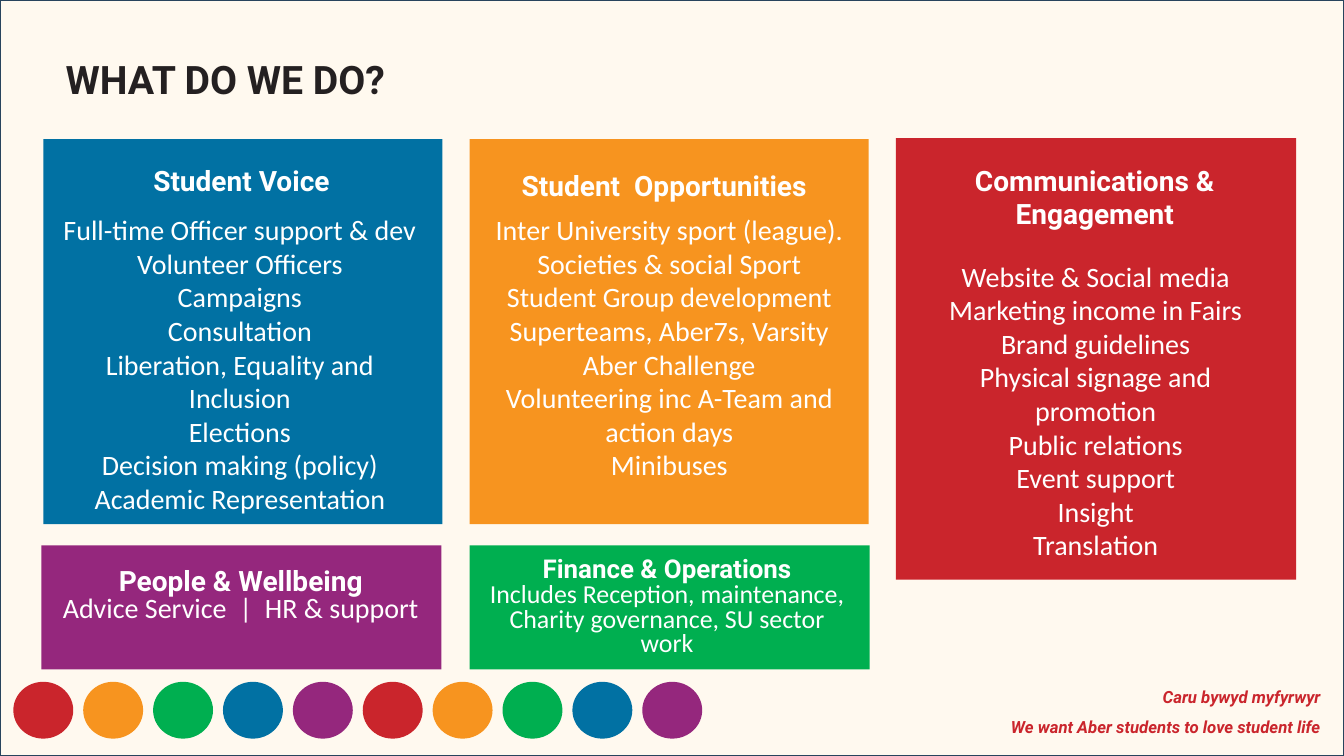
from pptx import Presentation
from pptx.dml.color import RGBColor
from pptx.enum import shapes, text
from pptx.util import Pt

RED = RGBColor(0xCA, 0x25, 0x2C)
ORANGE = RGBColor(0xF7, 0x94, 0x1F)
GREEN = RGBColor(0x00, 0xAF, 0x50)
BLUE = RGBColor(0x01, 0x71, 0xA3)
PURPLE = RGBColor(0x95, 0x27, 0x7D)
CREAM = RGBColor(0xFF, 0xF9, 0xEF)
NAVY = RGBColor(0x28, 0x44, 0x5D)
INK = RGBColor(0x24, 0x20, 0x21)
WHITE = RGBColor(0xFF, 0xFF, 0xFF)

W, H = 960, 540
TITLE = "WHAT DO WE DO?"
SLOGAN = ["Caru bywyd myfyrwyr", "We want Aber students to love student life"]
DEPARTMENTS = [
    dict(fill=BLUE, card=(31, 99.4, 285, 275),
         heading=["Student Voice"], heading_box=(29.5, 113, 286, 40),
         items=["Full-time Officer support & dev", "Volunteer Officers", "Campaigns",
                "Consultation", "Liberation, Equality and Inclusion", "Elections",
                "Decision making (policy)", "Academic Representation"],
         items_box=(36, 148.3, 270.7, 219.6)),
    dict(fill=ORANGE, card=(335.5, 99.4, 285, 275),
         heading=["Student  Opportunities"], heading_box=(331.5, 117, 286, 40),
         items=["Inter University sport (league).",
                "Societies & social Sport\vStudent Group development",
                "Superteams, Aber7s, Varsity", "Aber Challenge",
                "Volunteering inc A-Team and action days", "Minibuses"],
         items_box=(345.6, 148.3, 265, 180)),
    dict(fill=RED, card=(640, 98.6, 285.8, 315.4),
         heading=["Communications &", "Engagement"], heading_box=(639, 113, 286, 60),
         items=["Website & Social media", "Marketing income in Fairs", "Brand guidelines",
                "Physical signage and promotion", "Public relations", "Event support",
                "Insight", "Translation"],
         items_box=(668.9, 181.4, 227.5, 177.1)),
]
SERVICES = [
    dict(fill=GREEN, card=(335.5, 389.5, 285.8, 88.6), box=(333.4, 395.3, 286, 82),
         heading="Finance & Operations", size=18.5, body_size=18.5,
         body=["Includes Reception, maintenance,", "Charity governance, SU sector", "work"]),
    dict(fill=PURPLE, card=(29.5, 389.5, 285.8, 88.6), box=(29, 403.9, 286, 55),
         heading="People & Wellbeing", size=20, body_size=20,
         body=["Advice Service  |  HR & support"]),
]
DOT_COLORS = [RED, ORANGE, GREEN, BLUE, PURPLE] * 2
DOT_LEFT, DOT_TOP, DOT_W, DOT_H, DOT_STEP = 10, 487.5, 41.8, 39.6, 49.92

prs = Presentation()
prs.slide_width, prs.slide_height = Pt(W), Pt(H)
s = prs.slides.add_slide(prs.slide_layouts[4])
title = s.shapes.title
lists = [s.placeholders[i] for i in (1, 2, 3)]
spare = s.placeholders[4].element
spare.getparent().remove(spare)


def add_box(kind, box, fill, line=None, weight=1):
    sp = s.shapes.add_shape(kind, *map(Pt, box))
    sp.shadow.inherit = False
    sp.fill.solid()
    sp.fill.fore_color.rgb = fill
    if line is None:
        sp.line.fill.background()
    else:
        sp.line.color.rgb = line
        sp.line.width = Pt(weight)


def add_text(lines, box, sp=None, font="Calibri", size=20, color=WHITE, bold=False,
             italic=False, align=text.PP_ALIGN.CENTER, spacing=1.0, first=None):
    if sp is None:
        sp = s.shapes.add_textbox(*map(Pt, box))
    else:
        sp.left, sp.top, sp.width, sp.height = map(Pt, box)
        s.shapes.element.append(sp.element)
    tf = sp.text_frame
    tf.word_wrap = True
    tf.auto_size = text.MSO_AUTO_SIZE.NONE
    tf.vertical_anchor = text.MSO_ANCHOR.TOP
    tf.text = "\n".join(lines)
    for i, p in enumerate(tf.paragraphs):
        look = dict(font=font, size=size, bold=bold)
        if i == 0 and first:
            look.update(first)
        pPr = p._p.get_or_add_pPr()
        pPr.set("marL", "0")
        pPr.set("indent", "0")
        p.alignment = align
        p.line_spacing = spacing
        p.space_before = p.space_after = Pt(0)
        pPr.append(pPr.makeelement(
            "{http://schemas.openxmlformats.org/drawingml/2006/main}buNone", {}))
        for r in p.runs:
            r.font.name = look["font"]
            r.font.size = Pt(look["size"])
            r.font.bold = look["bold"]
            r.font.italic = italic
            r.font.color.rgb = color


RECT, OVAL = shapes.MSO_SHAPE.RECTANGLE, shapes.MSO_SHAPE.OVAL
add_box(RECT, (0, 0, W, H), CREAM, NAVY, 2)
add_text(SLOGAN, (480, 479.5, 470.4, 48.2), font="Roboto", size=12, color=RED,
         bold=True, italic=True, align=text.PP_ALIGN.RIGHT, spacing=1.5)
for i, color in enumerate(DOT_COLORS):
    add_box(OVAL, (DOT_LEFT + i * DOT_STEP, DOT_TOP, DOT_W, DOT_H), color, color)
add_text([TITLE], (39.6, 36, 882, 75), sp=title, font="Roboto", size=28, color=INK,
         bold=True, align=text.PP_ALIGN.LEFT)

for d, ph in zip(DEPARTMENTS, lists):
    add_box(RECT, d["card"], d["fill"])
    add_text(d["items"], d["items_box"], sp=ph)
    add_text(d["heading"], d["heading_box"], font="Roboto", bold=True)

for d in SERVICES:
    add_box(RECT, d["card"], d["fill"])
    add_text([d["heading"]] + d["body"], d["box"], size=d["body_size"], spacing=0.8,
             first=dict(font="Roboto", size=d["size"], bold=True))

prs.save("out.pptx")
